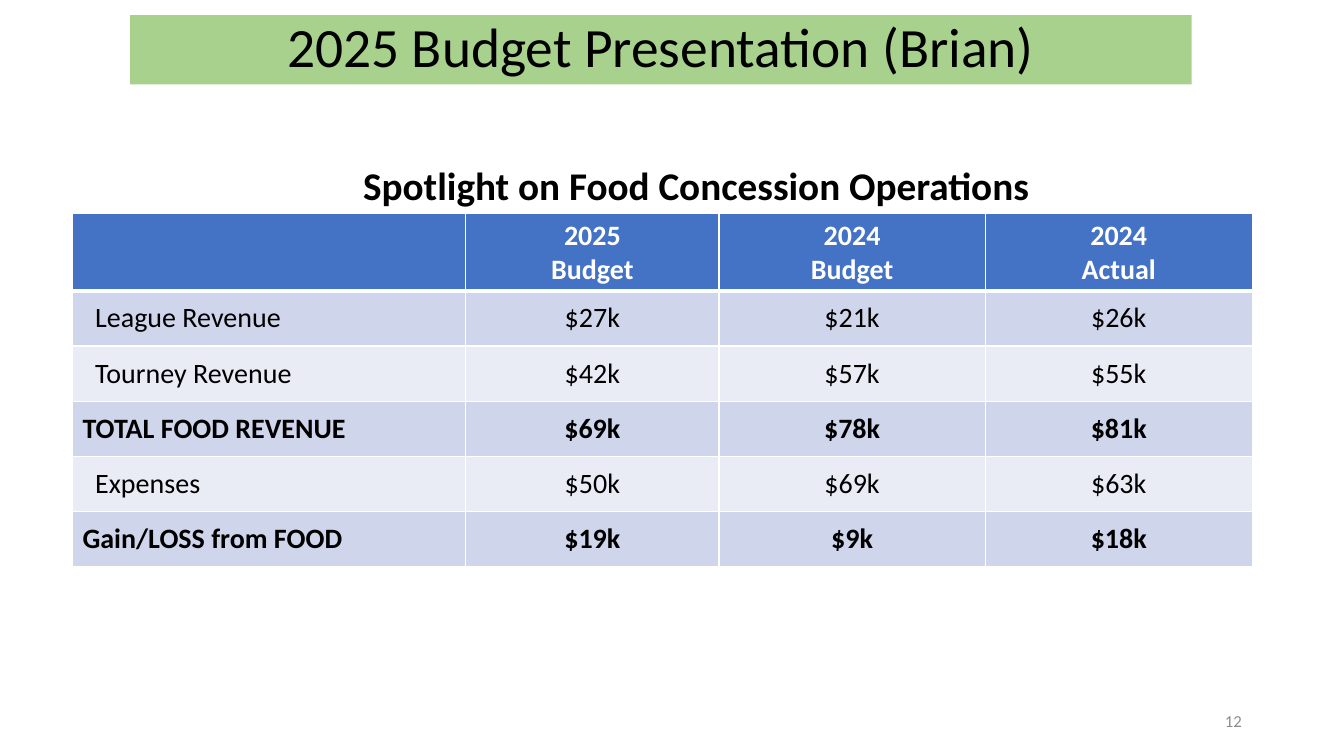
from lxml.etree import SubElement
from pptx import Presentation
from pptx.dml.color import RGBColor
from pptx.enum.shapes import MSO_SHAPE as SHAPE
from pptx.enum.text import MSO_ANCHOR as ANCHOR, PP_ALIGN as ALIGN
from pptx.oxml.ns import qn
from pptx.util import Cm, Pt

FONT = "Calibri"
BLACK = RGBColor(0x00, 0x00, 0x00)
WHITE = RGBColor(0xFF, 0xFF, 0xFF)
GRAY = RGBColor(0x8C, 0x8C, 0x8C)
GREEN = RGBColor(0xA9, 0xD1, 0x8E)
BLUE = RGBColor(0x44, 0x72, 0xC4)
BANDS = (RGBColor(0xE9, 0xEB, 0xF5), RGBColor(0xCF, 0xD5, 0xEA))

COL_WIDTHS = (9.91, 6.38, 6.71, 6.73)
HEADER_HEIGHT, ROW_HEIGHT = 1.93, 1.39
CELL_MARGIN, DETAIL_MARGIN = 0.25, 0.57
HEADER = ("", "2025\vBudget", "2024\vBudget", "2024\vActual")
BUDGET = (
    ("League Revenue", "$27k", "$21k", "$26k"),
    ("Tourney Revenue", "$42k", "$57k", "$55k"),
    ("TOTAL FOOD REVENUE", "$69k", "$78k", "$81k"),
    ("Expenses", "$50k", "$69k", "$63k"),
    ("Gain/LOSS from FOOD", "$19k", "$9k", "$18k"),
)
TOTALS = ("TOTAL FOOD REVENUE", "Gain/LOSS from FOOD")


def write(tf, text, size, color=BLACK, bold=False, align=ALIGN.CENTER):
    """Put one formatted paragraph into a text frame."""
    p = tf.paragraphs[0]
    p.text = text
    p.alignment = align
    for r in p.runs:
        r.font.name = FONT
        r.font.size = Pt(size)
        r.font.bold = bold
        r.font.color.rgb = color
    return p


def add_title(s, text):
    """Add the green title bar."""
    sp = s.shapes.add_shape(SHAPE.RECTANGLE, Cm(3.28), Cm(0.38), Cm(26.75), Cm(1.75))
    sp.shadow.inherit = False
    sp.fill.solid()
    sp.fill.fore_color.rgb = GREEN
    sp.line.fill.background()
    sp.text_frame.word_wrap = True
    sp.text_frame.vertical_anchor = ANCHOR.MIDDLE
    write(sp.text_frame, text, 39.6).line_spacing = 0.9


def add_text(s, box, text, size, anchor=ANCHOR.TOP, **style):
    """Add a wrapped text box, with its box in centimetres."""
    tf = s.shapes.add_textbox(*(Cm(v) for v in box)).text_frame
    tf.word_wrap = True
    tf.vertical_anchor = anchor
    write(tf, text, size, **style)


def set_borders(cell, top, bottom):
    """Draw white cell borders with the given top and bottom points."""
    tcPr = cell._tc.get_or_add_tcPr()
    for side, width in (("L", 1), ("R", 1), ("T", top), ("B", bottom)):
        ln = SubElement(tcPr, qn(f"a:ln{side}"), w=str(Pt(width)))
        fill = SubElement(ln, qn("a:solidFill"))
        SubElement(fill, qn("a:srgbClr"), val=str(WHITE))


def fill_cell(cell, text, fill, top=1, bottom=1, **style):
    """Give a table cell its borders, fill and text."""
    set_borders(cell, top, bottom)
    cell.fill.solid()
    cell.fill.fore_color.rgb = fill
    cell.vertical_anchor = ANCHOR.MIDDLE
    write(cell.text_frame, text, 20, **style)


def add_budget_table(s):
    """Add the food concession table."""
    height = HEADER_HEIGHT + ROW_HEIGHT * len(BUDGET)
    table = s.shapes.add_table(
        len(BUDGET) + 1, len(HEADER), Cm(1.83), Cm(5.38), Cm(sum(COL_WIDTHS)), Cm(height)
    ).table
    for col, width in zip(table.columns, COL_WIDTHS):
        col.width = Cm(width)
    table.rows[0].height = Cm(HEADER_HEIGHT)
    for j, text in enumerate(HEADER):
        fill_cell(table.cell(0, j), text, BLUE, bottom=3, color=WHITE, bold=True)
    for i, row in enumerate(BUDGET, 1):
        table.rows[i].height = Cm(ROW_HEIGHT)
        total = row[0] in TOTALS
        for j, text in enumerate(row):
            align = ALIGN.CENTER if j else ALIGN.LEFT
            top = 3 if i == 1 else 1
            fill_cell(table.cell(i, j), text, BANDS[i % 2], top, bold=total, align=align)
        table.cell(i, 0).margin_left = Cm(CELL_MARGIN if total else DETAIL_MARGIN)


def main():
    """Build and save the budget slide."""
    prs = Presentation()
    prs.slide_width, prs.slide_height = Cm(33.87), Cm(19.05)
    s = prs.slides.add_slide(prs.slide_layouts[6])
    add_title(s, "2025 Budget Presentation (Brian)")
    add_text(s, (2.95, 3.94, 29.18, 1.45), "Spotlight on Food Concession Operations", 28, bold=True)
    add_text(s, (23.93, 17.65, 7.62, 1.02), "12", 12, ANCHOR.MIDDLE, color=GRAY, align=ALIGN.RIGHT)
    add_budget_table(s)
    prs.save("out.pptx")


if __name__ == "__main__":
    main()
